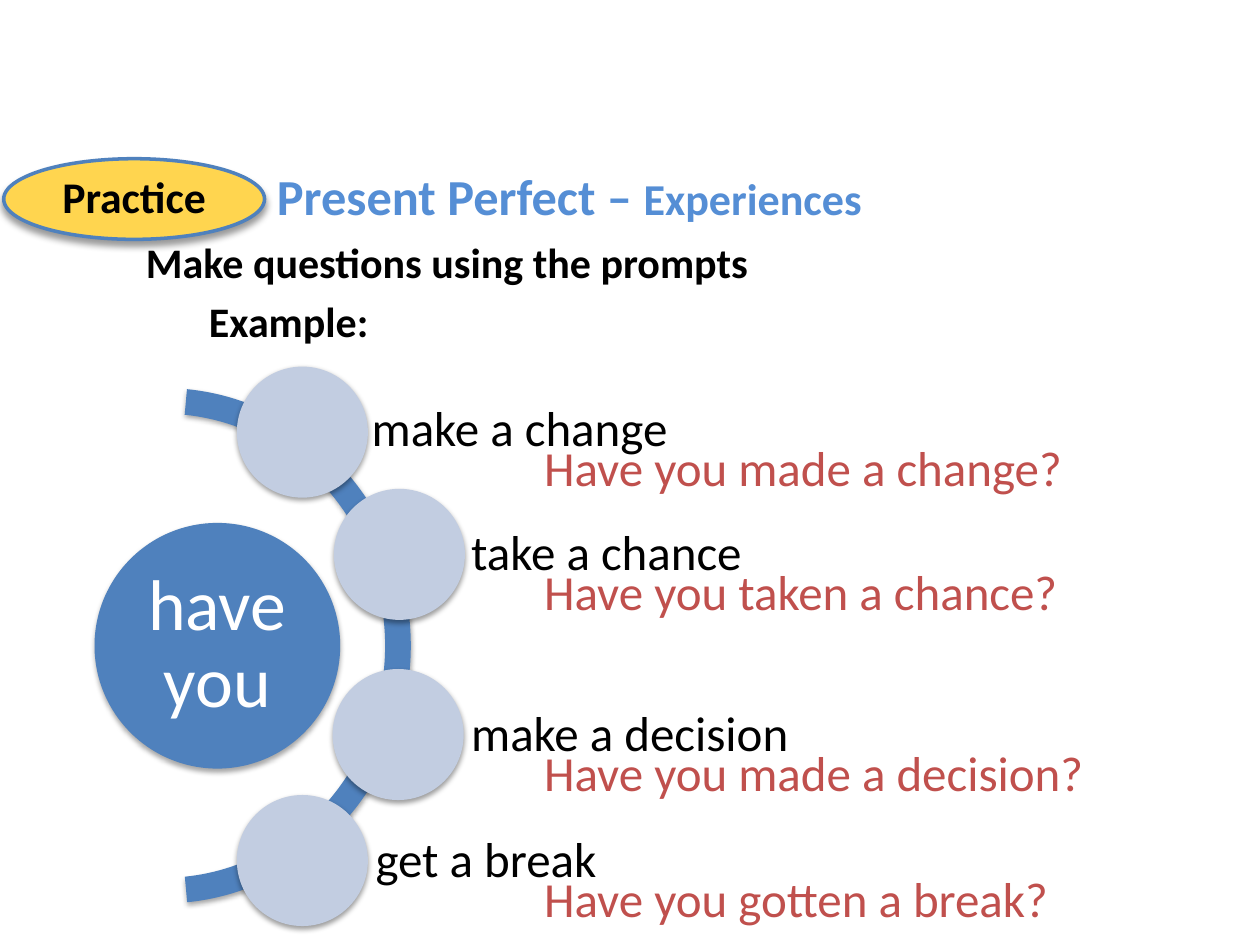
from dataclasses import dataclass

from lxml.etree import SubElement
from pptx import Presentation
from pptx.dml.color import RGBColor
from pptx.enum.shapes import MSO_SHAPE as Preset
from pptx.enum.text import MSO_ANCHOR as Anchor, PP_ALIGN as Align
from pptx.oxml.ns import qn
from pptx.util import Inches, Pt


@dataclass(frozen=True)
class Theme:
    font: str = "Calibri"
    blue: str = "4F81BD"
    pale: str = "C2CDE1"
    yellow: str = "FFD54F"
    title: str = "558ED5"
    answer: str = "C0504D"
    black: str = "000000"
    white: str = "FFFFFF"
    hub_size: float = 41
    title_size: float = 28.8
    subtitle_size: float = 25.2
    badge_size: float = 25
    body_size: float = 28
    instruction_size: float = 24


THEME = Theme()

PROMPTS = [
    (1.88, 2.91, 2.91, 2.91, 4.42, "make a change", "Have you made a change?", 4.5),
    (2.65, 3.88, 3.7, 3.9, 2.8, "take a chance", "Have you taken a chance?", 4.5),
    (2.64, 5.31, 3.7, 5.33, 3, "make a decision", "Have you made a decision?", 4.67),
    (1.88, 6.31, 2.94, 6.33, 3.39, "get a break", "Have you gotten a break?", 4.5),
]


def set_font(paragraph, size, color, bold=False):
    font = paragraph.font
    font.name = THEME.font
    font.size = Pt(size)
    font.bold = bold
    font.color.rgb = RGBColor.from_string(color)


def set_frame(shape, inset=None, anchor=Anchor.MIDDLE):
    frame = shape.text_frame
    frame.word_wrap = True
    frame.vertical_anchor = anchor
    if inset is not None:
        frame.margin_left = frame.margin_right = Inches(inset)
        frame.margin_top = frame.margin_bottom = Inches(inset)
    return frame


def add_shadow(shape, opacity, blur, distance):
    shape.shadow.inherit = False
    effects = shape._element.spPr.find(qn("a:effectLst"))
    shadow = SubElement(effects, qn("a:outerShdw"), blurRad=str(Pt(blur)),
                        dist=str(Pt(distance)), dir="5400000", rotWithShape="0")
    color = SubElement(shadow, qn("a:srgbClr"), val=THEME.black)
    SubElement(color, qn("a:alpha"), val=str(opacity * 1000))


def add_solid(slide, preset, box, fill, shadow, line=None):
    shape = slide.shapes.add_shape(preset, *map(Inches, box))
    shape.fill.solid()
    shape.fill.fore_color.rgb = RGBColor.from_string(fill)
    if line:
        shape.line.color.rgb = RGBColor.from_string(line)
        shape.line.width = Pt(2)
    else:
        shape.line.fill.background()
    add_shadow(shape, *shadow)
    return shape


def write_centered(shape, text, inset, size, color, bold=False):
    paragraph = set_frame(shape, inset).paragraphs[0]
    paragraph.text = text
    paragraph.alignment = Align.CENTER
    paragraph.line_spacing = 0.9
    set_font(paragraph, size, color, bold)


def add_text(slide, box, text, color, inset=None, anchor=Anchor.TOP, spacing=None):
    text_box = slide.shapes.add_textbox(*map(Inches, box))
    paragraph = set_frame(text_box, inset, anchor).paragraphs[0]
    paragraph.text = text
    paragraph.line_spacing = spacing
    set_font(paragraph, THEME.body_size, color)


def add_prompt(slide, circle_left, circle_top, left, top, width, prompt, answer, answer_width):
    add_solid(slide, Preset.OVAL, (circle_left, circle_top, 1.04, 1.04),
              THEME.pale, (38, 3.1, 1.6))
    add_text(slide, (left, top, width, 1.01), prompt, THEME.black, 0.04, Anchor.MIDDLE, 0.9)
    add_text(slide, (4.22, top + 0.51, answer_width, 0.57), answer, THEME.answer)


def add_hub(slide):
    hub = add_solid(slide, Preset.OVAL, (0.75, 4.15, 1.95, 1.95), THEME.blue, (35, 3.1, 1.8))
    write_centered(hub, "have you", 0.06, THEME.hub_size, THEME.white)
    arc = add_solid(slide, Preset.BLOCK_ARC, (-0.66, 3.08, 3.92, 4.09),
                    THEME.blue, (35, 3.1, 1.8))
    for index, value in enumerate((165.094, 50.881, 0.052)):
        arc.adjustments[index] = value


def add_title(slide):
    text_box = slide.shapes.add_textbox(*map(Inches, (2.1, 1.29, 6.87, 0.52)))
    paragraph = set_frame(text_box).paragraphs[0]
    set_font(paragraph, THEME.title_size, THEME.title, True)
    paragraph.add_run().text = "Present Perfect – "
    topic = paragraph.add_run()
    topic.text = "Experiences"
    topic.font.size = Pt(THEME.subtitle_size)


def add_badge(slide):
    badge = add_solid(slide, Preset.OVAL, (0.03, 1.26, 2.07, 0.64),
                      THEME.yellow, (40, 4, 3), THEME.blue)
    write_centered(badge, "Practice", 0, THEME.badge_size, THEME.black, True)


def add_instructions(slide):
    text_box = slide.shapes.add_textbox(*map(Inches, (1.06, 1.83, 8.44, 1.24)))
    frame = set_frame(text_box, anchor=Anchor.TOP)
    instruction, example = frame.paragraphs[0], frame.add_paragraph()
    instruction.text = "Make questions using the prompts"
    example.text = "\tExample:"
    example.space_before = Pt(4.8)
    tabs = SubElement(example._p.get_or_add_pPr(), qn("a:tabLst"))
    SubElement(tabs, qn("a:tab"), pos=str(Inches(0.5)), algn="l")
    for paragraph in (instruction, example):
        set_font(paragraph, THEME.instruction_size, THEME.black, True)


def main():
    presentation = Presentation()
    presentation.slide_width, presentation.slide_height = Inches(10), Inches(7.5)
    slide = presentation.slides.add_slide(presentation.slide_layouts[6])
    add_hub(slide)
    for prompt in PROMPTS:
        add_prompt(slide, *prompt)
    add_title(slide)
    add_badge(slide)
    add_instructions(slide)
    presentation.save("out.pptx")


if __name__ == "__main__":
    main()
